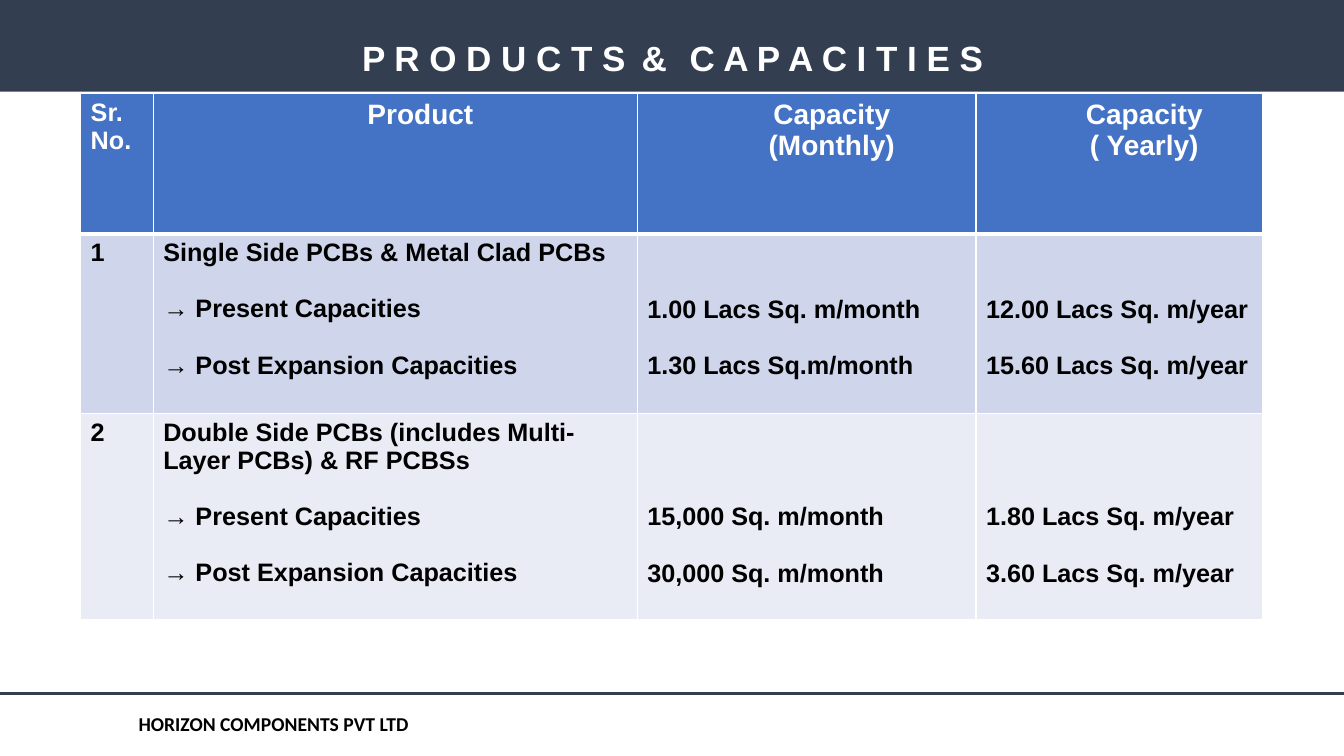
from dataclasses import dataclass
from lxml.etree import SubElement
from pptx import Presentation
from pptx.dml.color import RGBColor
from pptx.enum.shapes import MSO_CONNECTOR, MSO_SHAPE
from pptx.enum.text import MSO_ANCHOR, MSO_AUTO_SIZE, PP_ALIGN
from pptx.oxml.ns import qn
from pptx.util import Pt

SCALE = 9144  # EMU in one px, 100 px to the inch


@dataclass(frozen=True)
class Theme:
    navy: str = "333F50"
    blue: str = "4472C4"
    bands: tuple = ("CFD5EA", "E9EBF5")
    white: str = "FFFFFF"
    black: str = "000000"
    sans: str = "Arial"
    foot: str = "Calibri"
    title: int = 25
    head: int = 20
    body: int = 18
    note: int = 14
    gap: int = 20


def px(*sizes):
    return [size * SCALE for size in sizes]


def apply(item, form):
    for name, value in form.items():
        setattr(item, name, value)


class Deck:
    def __init__(self, theme):
        self.theme = theme
        self.show = Presentation()
        apply(self.show, dict(zip(("slide_width", "slide_height"), px(1333, 750))))
        self.slide = self.show.slides.add_slide(self.show.slide_layouts[5])
        self.shapes = self.slide.shapes

    def words(self, para, text, size, color, face=None, align=PP_ALIGN.LEFT):
        para.alignment = align
        run = para.add_run()
        run.text = text
        apply(run.font, {"size": Pt(size), "bold": True, "name": face or self.theme.sans})
        run.font.color.rgb = RGBColor.from_string(color)
        return run

    def frame(self, shape):
        frame = shape.text_frame
        apply(frame, {"word_wrap": True, "auto_size": MSO_AUTO_SIZE.NONE,
                      "vertical_anchor": MSO_ANCHOR.MIDDLE})
        return frame.paragraphs[0]

    def band(self, box, color):
        shape = self.shapes.add_shape(MSO_SHAPE.RECTANGLE, *px(*box))
        shape.shadow.inherit = False
        shape.fill.solid()
        shape.fill.fore_color.rgb = RGBColor.from_string(color)
        shape.line.fill.background()

    def title(self, box, parts):
        """Set the title from (text, letter spacing in 1/100 pt) parts, in front of the band."""
        shape = self.shapes.title
        apply(shape, dict(zip(("left", "top", "width", "height"), px(*box))))
        para = self.frame(shape)
        para.line_spacing = 0.9
        for text, space in parts:
            run = self.words(para, text, self.theme.title, self.theme.white,
                             align=PP_ALIGN.CENTER)
            run.font._element.set("spc", str(space))
        shape.element.getparent().append(shape.element)

    def rule(self, ends, color, width):
        line = self.shapes.add_connector(MSO_CONNECTOR.STRAIGHT, *px(*ends))
        line.line.color.rgb = RGBColor.from_string(color)
        line.line.width = Pt(width)
        SubElement(line.element.spPr, qn("a:effectLst"))

    def note(self, box, text):
        shape = self.shapes.add_textbox(*px(*box))
        self.words(self.frame(shape), text, self.theme.note, self.theme.black,
                   self.theme.foot, PP_ALIGN.CENTER)

    def grid(self, spot, cols, rows):
        box = (*spot, sum(cols), sum(rows))
        table = self.shapes.add_table(len(rows), len(cols), *px(*box)).table
        for col, width in zip(table.columns, px(*cols)):
            col.width = width
        for row, height in zip(table.rows, px(*rows)):
            row.height = height
        return table

    def cell(self, cell, lines, fill, form, gap=0, edges=(1, 1, 1, 1), margin=None):
        """Fill one cell; edges are left, right, top and bottom widths in pt."""
        apply(cell, margin or {})
        for n, text in enumerate(lines):
            para = cell.text_frame.add_paragraph() if n else cell.text_frame.paragraphs[0]
            if n and gap:
                para.space_before = Pt(gap)
            self.words(para, text, **form)
        props = cell._tc.get_or_add_tcPr()
        for side, width in zip("LRTB", edges):
            edge = SubElement(props, qn(f"a:ln{side}"), w=str(Pt(width)))
            paint = SubElement(edge, qn("a:solidFill"))
            SubElement(paint, qn("a:srgbClr"), val=self.theme.white)
        cell.fill.solid()
        cell.fill.fore_color.rgb = RGBColor.from_string(fill)


HEADS = [["Sr. No."], ["Product"], ["Capacity", "(Monthly)"], ["Capacity", "( Yearly)"]]
PLANS = ["→ Present Capacities", "→ Post Expansion Capacities"]
# Product, monthly and yearly capacity, and top margin that lines values up with plans
GOODS = [
    ("Single Side PCBs & Metal Clad PCBs",
     ["1.00 Lacs Sq. m/month", "1.30 Lacs Sq.m/month"],
     ["12.00 Lacs Sq. m/year", "15.60 Lacs Sq. m/year"], 61),
    ("Double Side PCBs (includes Multi-Layer PCBs) & RF PCBSs",
     ["15,000 Sq. m/month", "30,000 Sq. m/month"],
     ["1.80 Lacs Sq. m/year", "3.60 Lacs Sq. m/year"], 89),
]


def main():
    theme = Theme()
    deck = Deck(theme)
    deck.band((0, 0, 1333, 91), theme.navy)
    deck.rule((0, 688, 1333, 688), theme.navy, 2.25)
    deck.title((92, 12, 1150, 95), [("P R O D U C T S", 0), (" & ", 465),
                                    ("C A P A C I T I E S", 0)])
    deck.note((116, 698, 311, 40), "HORIZON COMPONENTS PVT LTD")

    table = deck.grid((80, 93), (72, 480, 336, 284), (139, 178, 205))
    for col, lines in enumerate(HEADS):
        form = {"size": theme.head if col else theme.body, "color": theme.white,
                "align": PP_ALIGN.CENTER if col else PP_ALIGN.LEFT}
        margin = {"margin_left": 60 * SCALE} if col else {}
        deck.cell(table.cell(0, col), lines, theme.blue, form,
                  edges=(1, 1, 1, 3), margin=margin)

    form = {"size": theme.body, "color": theme.black}
    for row, (name, month, year, top) in enumerate(GOODS, 1):
        edges = (1, 1, 3 if row == 1 else 1, 1)
        for col, lines in enumerate([[str(row)], [name, *PLANS], month, year]):
            margin = {"margin_top": top * SCALE} if col > 1 else {}
            deck.cell(table.cell(row, col), lines, theme.bands[row - 1], form,
                      theme.gap, edges, margin)
    deck.show.save("out.pptx")


if __name__ == "__main__":
    main()
